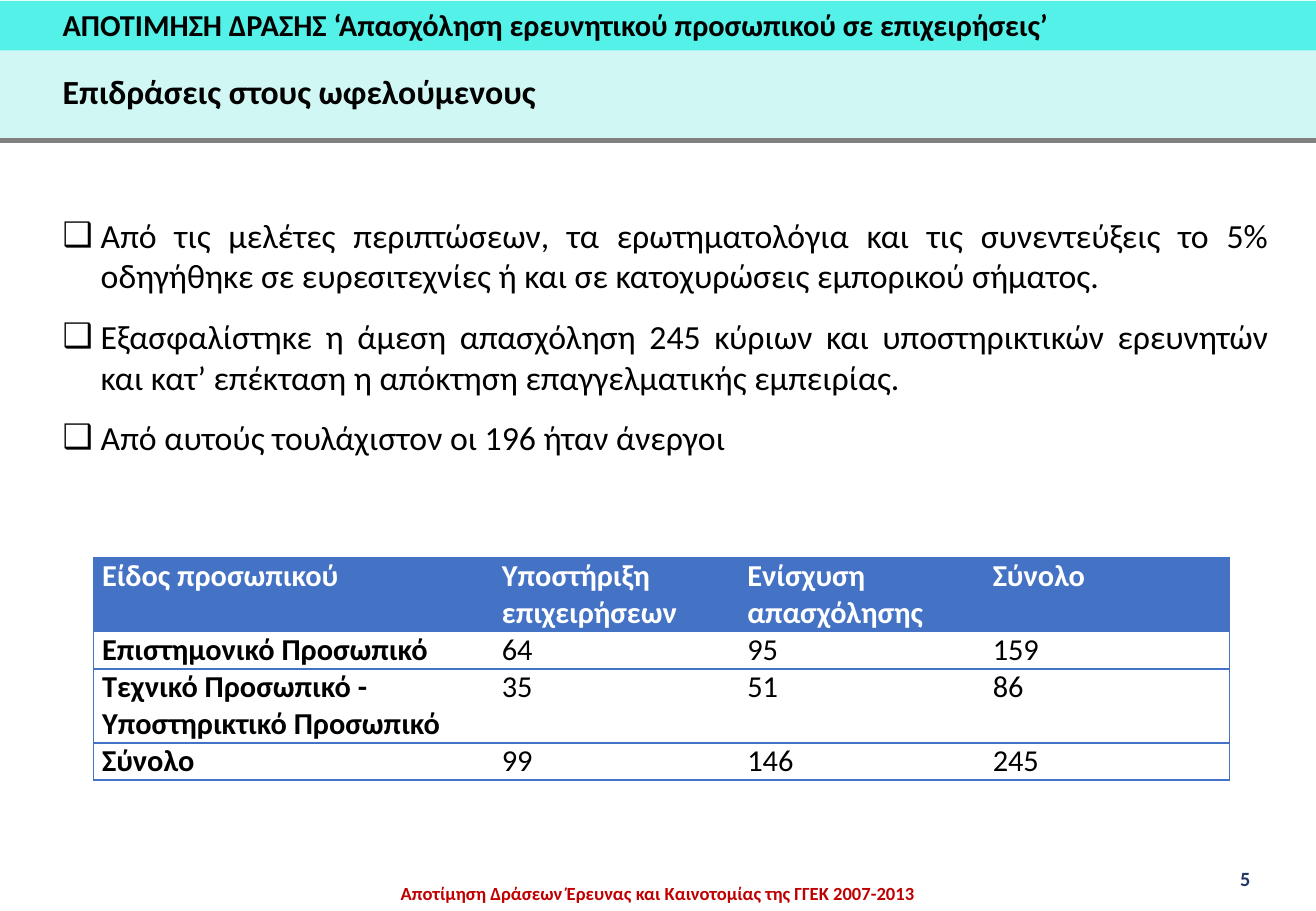
from dataclasses import dataclass

from lxml.etree import SubElement
from pptx import Presentation
from pptx.dml.color import RGBColor
from pptx.enum.shapes import MSO_CONNECTOR, MSO_SHAPE
from pptx.enum.text import MSO_ANCHOR as Anchor, MSO_AUTO_SIZE as AutoSize, PP_ALIGN as Align
from pptx.oxml.ns import qn
from pptx.util import Pt


@dataclass(frozen=True)
class Theme:
    font: str = "Calibri"
    black: str = "000000"
    white: str = "FFFFFF"
    band: str = "53F1E8"
    title_band: str = "D0F7F3"
    rule: str = "808080"
    table: str = "4472C4"
    footer: str = "C00000"
    number: str = "203864"
    large: int = 20
    medium: int = 18
    small: int = 12
    tiny: int = 11


theme = Theme()


def place(shape, left, top, width, height):
    shape.left, shape.top, shape.width, shape.height = Pt(left), Pt(top), Pt(width), Pt(height)
    shape.text_frame.word_wrap = True
    shape.text_frame.auto_size = AutoSize.NONE


def style(paragraph, size, color, bold=False, align=Align.LEFT):
    paragraph.alignment = align
    paragraph.space_before = Pt(0)
    for run in paragraph.runs:
        run.font.name = theme.font
        run.font.size = Pt(size)
        run.font.bold = bold
        run.font.color.rgb = RGBColor.from_string(color)


presentation = Presentation()
presentation.slide_width, presentation.slide_height = Pt(780), Pt(540)
slide = presentation.slides.add_slide(presentation.slide_layouts[1])
title, body = slide.placeholders[0], slide.placeholders[1]

# Header bands, behind the title
for top, height, color in [(0.5, 29.5, theme.band), (30, 53.5, theme.title_band)]:
    band = slide.shapes.add_shape(MSO_SHAPE.RECTANGLE, Pt(0), Pt(top), Pt(780), Pt(height))
    band.shadow.inherit = False
    band.fill.solid()
    band.fill.fore_color.rgb = RGBColor.from_string(color)
    band.line.fill.background()
    title.element.addprevious(band.element)

# Rule under the header
rule = slide.shapes.add_connector(MSO_CONNECTOR.STRAIGHT, Pt(0), Pt(83.5), Pt(780), Pt(83.5))
rule.line.color.rgb = RGBColor.from_string(theme.rule)
rule.line.width = Pt(3)
SubElement(rule.element.spPr, qn("a:effectLst"))

# Title
place(title, 30, 36, 720, 32.5)
title.text_frame.text = "Επιδράσεις στους ωφελούμενους"
title.text_frame.vertical_anchor = Anchor.TOP
title.text_frame.paragraphs[0].line_spacing = 1.1
style(title.text_frame.paragraphs[0], theme.large, theme.black, bold=True)

# Running head, footer and slide number
labels = [
    ("ΑΠΟΤΙΜΗΣΗ ΔΡΑΣΗΣ ‘Απασχόληση ερευνητικού προσωπικού σε επιχειρήσεις’",
     (30, 0, 744.5, 29), theme.medium, theme.black, Align.LEFT),
    ("Aποτίμηση Δράσεων Έρευνας και Καινοτομίας της ΓΓΕΚ 2007-2013",
     (203, 519, 374, 20), theme.tiny, theme.footer, Align.CENTER),
    ("5", (728, 510, 37.5, 21.5), theme.small, theme.number, Align.LEFT),
]
for text, bounds, size, color, align in labels:
    label = slide.shapes.add_textbox(0, 0, 0, 0)
    place(label, *bounds)
    label.text_frame.text = text
    style(label.text_frame.paragraphs[0], size, color, bold=True, align=align)

# Findings
findings = [
    "Από τις μελέτες περιπτώσεων, τα ερωτηματολόγια και τις συνεντεύξεις το 5% "
    "οδηγήθηκε σε ευρεσιτεχνίες ή και σε κατοχυρώσεις εμπορικού σήματος.",
    "Εξασφαλίστηκε η άμεση απασχόληση 245 κύριων και υποστηρικτικών ερευνητών "
    "και κατ’ επέκταση η απόκτηση επαγγελματικής εμπειρίας.",
    "Από αυτούς τουλάχιστον οι 196 ήταν άνεργοι",
]
place(body, 30, 123, 729.5, 152.5)
body.text_frame.vertical_anchor = Anchor.MIDDLE
body.text_frame.text = "\n".join(findings)
for index, paragraph in enumerate(body.text_frame.paragraphs):
    properties = paragraph._p.get_or_add_pPr()
    properties.set("marL", str(Pt(22.5)))
    properties.set("indent", str(-Pt(22.5)))
    SubElement(properties, qn("a:buChar"), char="❑")
    style(paragraph, theme.large, theme.black, align=Align.JUSTIFY)
    paragraph.space_before = Pt(6 if index else 0)
    paragraph.space_after = Pt(6)

# Staff table
rows = [
    ("Είδος προσωπικού", "Υποστήριξη επιχειρήσεων", "Ενίσχυση απασχόλησης", "Σύνολο"),
    ("Επιστημονικό Προσωπικό", "64", "95", "159"),
    ("Τεχνικό Προσωπικό - Υποστηρικτικό Προσωπικό", "35", "51", "86"),
    ("Σύνολο", "99", "146", "245"),
]
column_widths = [237, 145.5, 145.5, 145.5]
row_heights = [43.2, 21.6, 43.2, 21.6]
table = slide.shapes.add_table(len(rows), len(column_widths), Pt(55.5), Pt(330.5),
                               Pt(sum(column_widths)), Pt(sum(row_heights))).table
table.horz_banding = False
for column, width in zip(table.columns, column_widths):
    column.width = Pt(width)
for row, height in zip(table.rows, row_heights):
    row.height = Pt(height)

for row_index, row in enumerate(rows):
    for column_index, text in enumerate(row):
        cell = table.cell(row_index, column_index)
        header, first = row_index == 0, column_index == 0
        cell.text = text
        cell.margin_left = cell.margin_right = Pt(5)
        cell.margin_top = cell.margin_bottom = Pt(0)
        style(cell.text_frame.paragraphs[0], theme.medium,
              theme.white if header else theme.black, bold=header or first)

        # Outer frame and row lines only
        visible = {"L": first, "R": column_index == len(row) - 1, "T": True, "B": True}
        for side, shown in visible.items():
            border = SubElement(cell._tc.get_or_add_tcPr(), qn(f"a:ln{side}"), w=str(Pt(1)))
            if shown:
                SubElement(SubElement(border, qn("a:solidFill")), qn("a:srgbClr"), val=theme.table)
            else:
                SubElement(border, qn("a:noFill"))
        cell.fill.solid()
        cell.fill.fore_color.rgb = RGBColor.from_string(theme.table if header else theme.white)

presentation.save("out.pptx")
